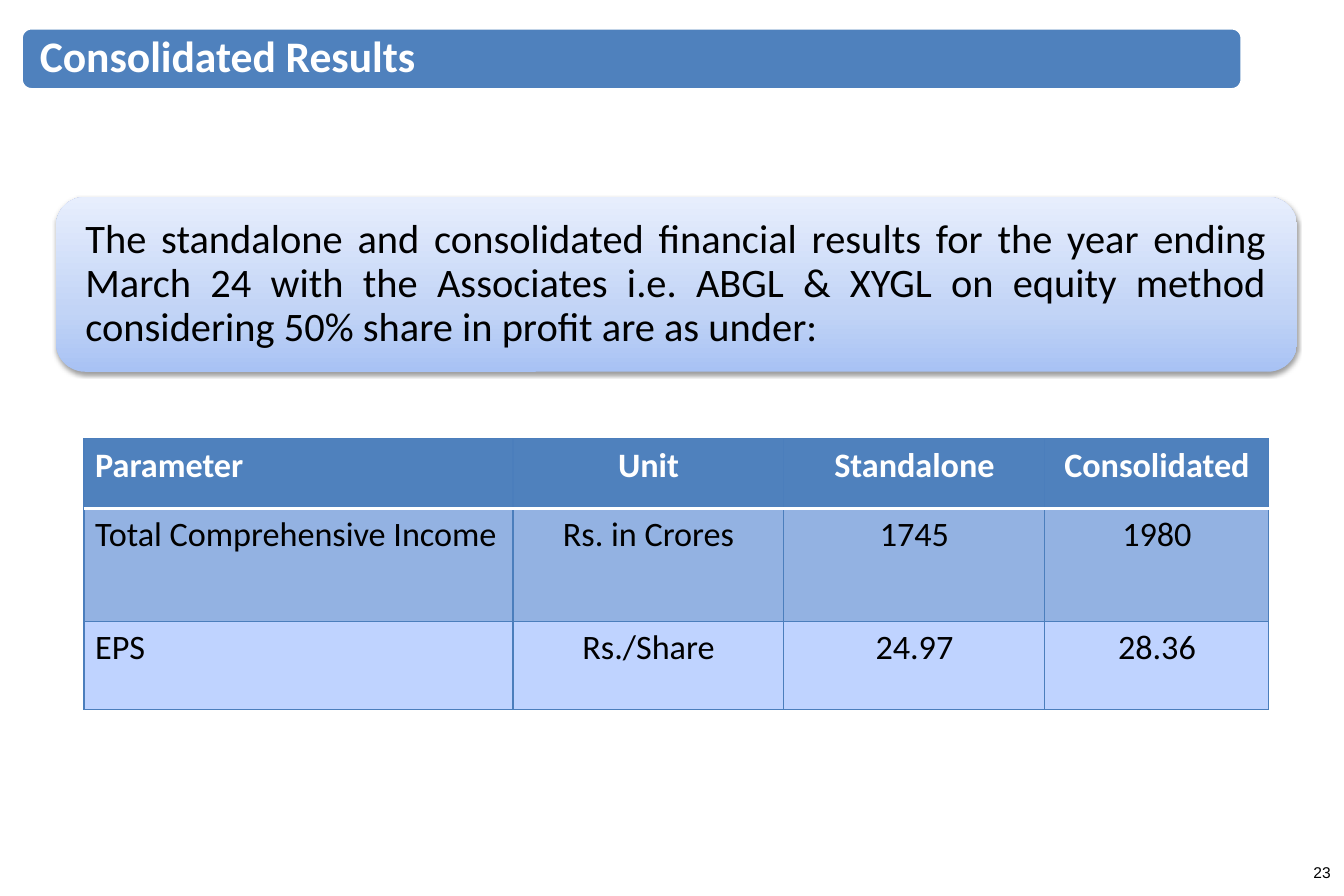
from copy import deepcopy

from lxml import etree
from pptx import Presentation
from pptx import util as u
from pptx.dml import color
from pptx.enum import shapes, text
from pptx.oxml import ns

Pt = u.Pt
BLUE, BORDER, WHITE, BLACK = "4F81BD", "4B7EBC", "FFFFFF", "000000"
LEFT, CENTER = text.PP_ALIGN.LEFT, text.PP_ALIGN.CENTER
RIGHT, JUSTIFY = text.PP_ALIGN.RIGHT, text.PP_ALIGN.JUSTIFY

GRADIENT_STOPS = [(0, "A8C2F4"), (0.35, "C2D4F6"), (1, "E7EEFD")]
COLUMN_WIDTHS = [275.8, 174.2, 167.8, 144]
ROW_HEIGHTS = [44.6, 72.7, 56.9]
ROW_FILLS = [BLUE, "93B2E2", "BFD3FF"]
RESULTS = [
    ["Parameter", "Unit", "Standalone", "Consolidated"],
    ["Total Comprehensive Income", "Rs. in Crores", "1745", "1980"],
    ["EPS", "Rs./Share", "24.97", "28.36"],
]


def rgb(value):
    return color.RGBColor.from_string(value)


def apply_format(target, values):
    for name, value in values.items():
        setattr(target, name, value)


def add_element(parent, tag, **attributes):
    return etree.SubElement(parent, ns.qn(tag), attributes)


def write_text(frame, words, size, font_color, bold=False, name="Calibri", **paragraph_format):
    paragraph = frame.paragraphs[0]
    paragraph.text = words
    apply_format(paragraph, paragraph_format)
    apply_format(paragraph.font, {"size": Pt(size), "bold": bold, "name": name})
    paragraph.font.color.rgb = rgb(font_color)


def set_frame(frame, side, edge):
    apply_format(frame, {
        "word_wrap": True, "vertical_anchor": text.MSO_ANCHOR.MIDDLE,
        "margin_left": Pt(side), "margin_right": Pt(side),
        "margin_top": Pt(edge), "margin_bottom": Pt(edge),
    })


def add_panel(slide, left, top, width, height, inset):
    panel = slide.shapes.add_shape(
        shapes.MSO_SHAPE.ROUNDED_RECTANGLE, Pt(left), Pt(top), Pt(width), Pt(height))
    panel.shadow.inherit = False
    set_frame(panel.text_frame, inset, 8)
    return panel


def add_title(slide, words):
    panel = add_panel(slide, 13.7, 18, 784.8, 39.6, 10)
    panel.fill.solid()
    panel.fill.fore_color.rgb = rgb(BLUE)
    panel.line.color.rgb = rgb(WHITE)
    panel.line.width = Pt(2)
    write_text(panel.text_frame, words, 28, WHITE, True, alignment=LEFT, line_spacing=0.9)


def fill_gradient(shape):
    """Fill from the bottom upwards with the three gradient stops."""
    shape.fill.gradient()
    shape.fill.gradient_angle = 90
    stop_list = shape._element.spPr.find(".//" + ns.qn("a:gsLst"))
    stop_list.append(deepcopy(stop_list[-1]))
    for stop, (position, value) in zip(shape.fill.gradient_stops, GRADIENT_STOPS):
        stop.position = position
        stop.color.rgb = rgb(value)


def add_shadow(shape):
    effects = shape._element.spPr.find(ns.qn("a:effectLst"))
    shadow = add_element(effects, "a:outerShdw", blurRad=str(Pt(3.1)), dist=str(Pt(1.6)),
                         dir="5400000", rotWithShape="0")
    shade = add_element(shadow, "a:srgbClr", val=BLACK)
    add_element(shade, "a:alpha", val="38000")


def add_callout(slide, words):
    panel = add_panel(slide, 36, 126.7, 797.8, 112.3, 13.4)
    fill_gradient(panel)
    panel.line.fill.background()
    add_shadow(panel)
    write_text(panel.text_frame, words, 26, BLACK, alignment=JUSTIFY, line_spacing=0.9)


def add_border(cell, side, value, width):
    line = add_element(cell._tc.get_or_add_tcPr(), f"a:ln{side}", w=str(Pt(width)))
    fill = add_element(line, "a:solidFill")
    add_element(fill, "a:srgbClr", val=value)


def format_cell(cell, row, column):
    for side in "LRTB":
        under_header = (row, side) in [(0, "B"), (1, "T")]
        add_border(cell, side, *((WHITE, 2) if under_header else (BORDER, 0.75)))
    cell.fill.solid()
    cell.fill.fore_color.rgb = rgb(ROW_FILLS[row])
    header = row == 0
    write_text(cell.text_frame, RESULTS[row][column], 22, WHITE if header else BLACK,
               header, alignment=CENTER if column else LEFT)


def add_results_table(slide):
    table = slide.shapes.add_table(
        len(ROW_HEIGHTS), len(COLUMN_WIDTHS), Pt(54), Pt(282.2),
        Pt(sum(COLUMN_WIDTHS)), Pt(sum(ROW_HEIGHTS))).table
    for column, width in zip(table.columns, COLUMN_WIDTHS):
        column.width = Pt(width)
    for row, height in zip(table.rows, ROW_HEIGHTS):
        row.height = Pt(height)
    for row in range(len(ROW_HEIGHTS)):
        for column in range(len(COLUMN_WIDTHS)):
            format_cell(table.cell(row, column), row, column)


def add_page_number(slide, number):
    box = slide.shapes.add_textbox(Pt(662.4), Pt(545), Pt(201.6), Pt(31))
    set_frame(box.text_frame, 8.6, 4.3)
    write_text(box.text_frame, number, 10, BLACK, name="Arial", alignment=RIGHT)


def main():
    presentation = Presentation()
    apply_format(presentation, {"slide_width": Pt(864), "slide_height": Pt(576)})
    slide = presentation.slides.add_slide(presentation.slide_layouts[6])
    add_page_number(slide, "23")
    add_title(slide, "Consolidated Results")
    add_callout(slide, "The standalone and consolidated financial results for the year ending "
                "March 24 with the Associates i.e. ABGL & XYGL on equity method "
                "considering 50% share in profit are as under:")
    add_results_table(slide)
    presentation.save("out.pptx")


if __name__ == "__main__":
    main()
